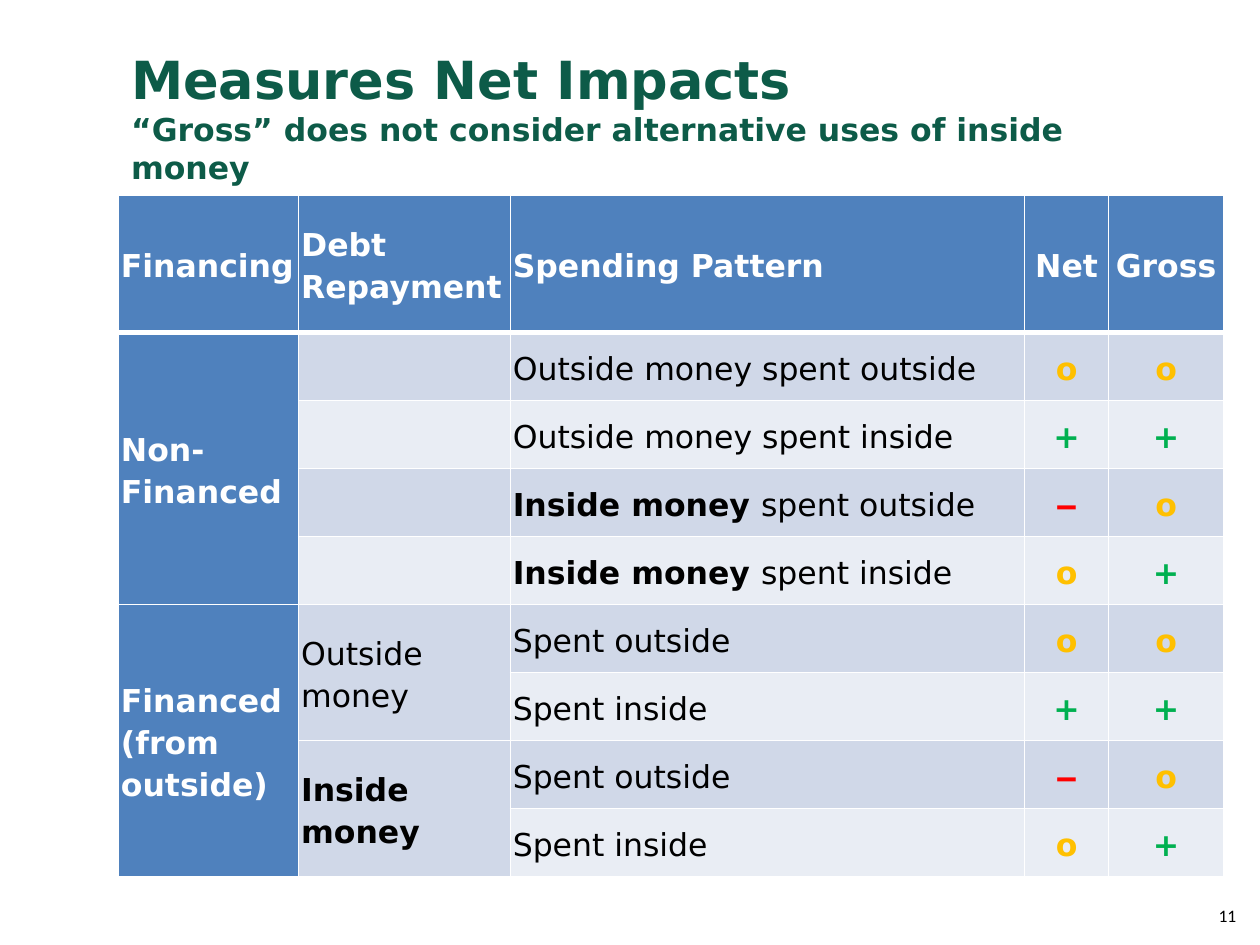
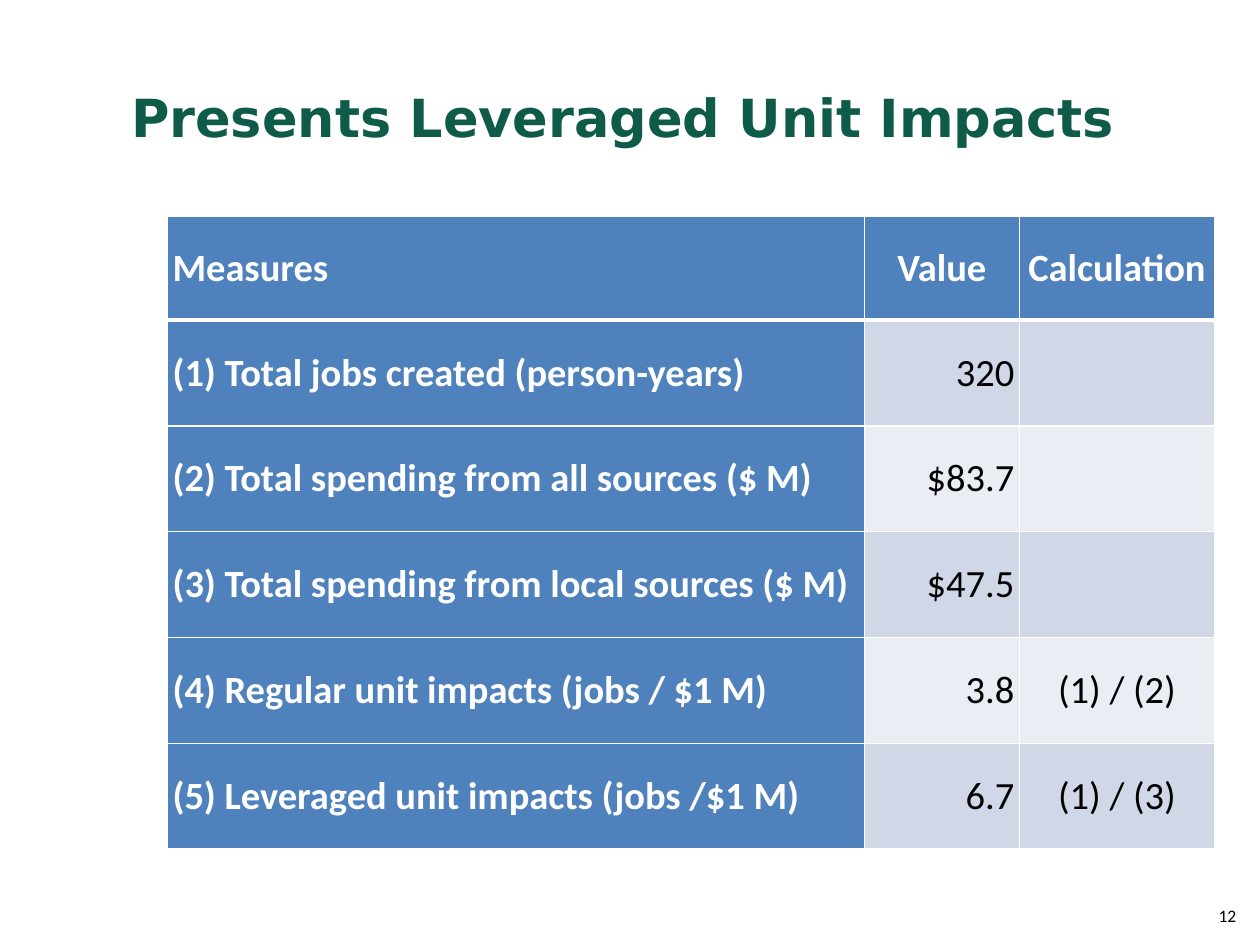
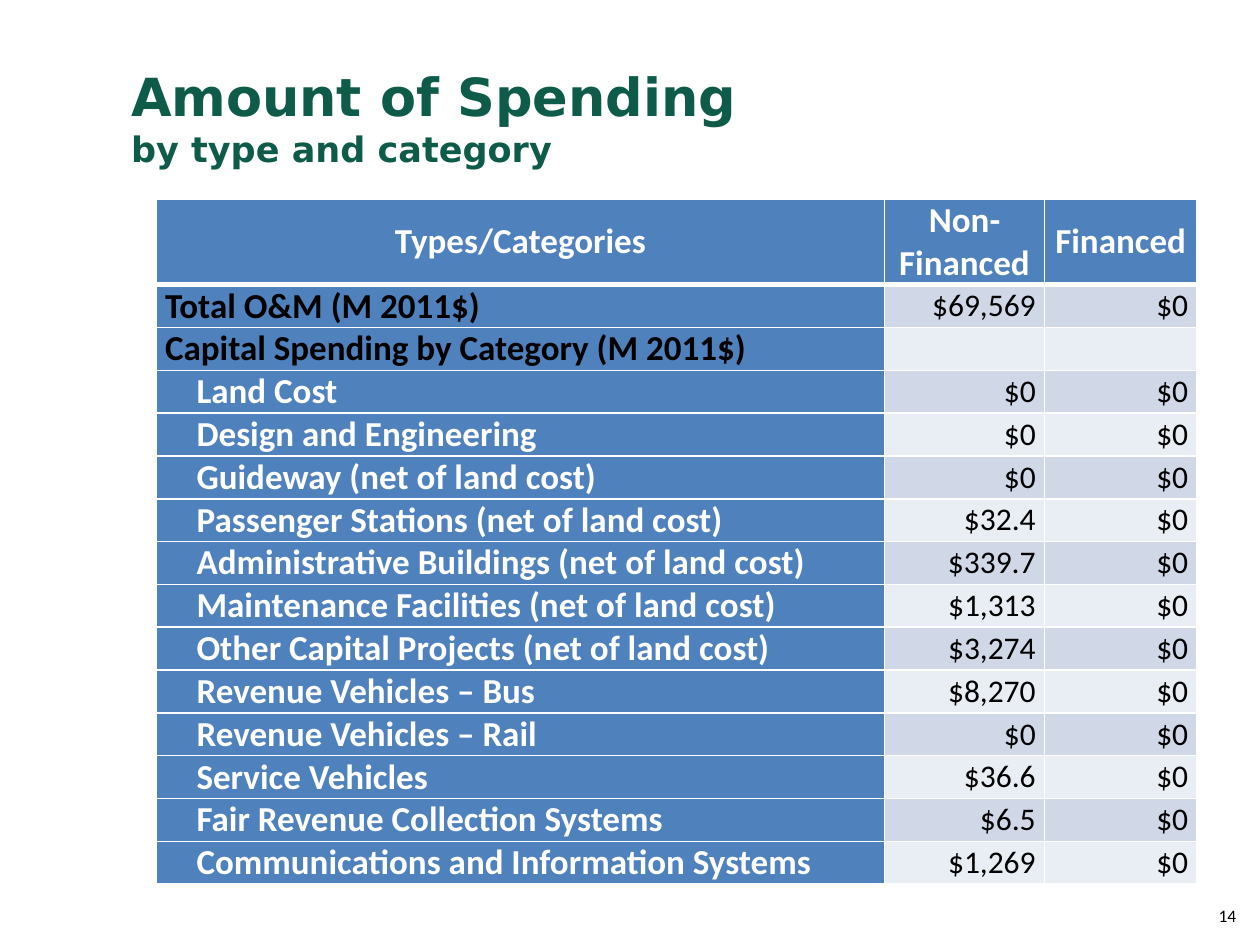
from lxml.etree import SubElement
from pptx import Presentation
from pptx.dml.color import RGBColor
from pptx.enum.text import MSO_ANCHOR, MSO_AUTO_SIZE, PP_ALIGN
from pptx.oxml.ns import qn
from pptx.util import Inches, Pt

GREEN, BLUE, WHITE, BLACK = "0D5B48", "4F81BD", "FFFFFF", "000000"
BANDS = ("E9EDF4", "D0D8E8")  # even and odd body rows
SIGN_COLORS = {"o": "FFC000", "+": "00B050", "‒": "FF0000"}
HEADING_FONT, BODY_FONT = "DejaVu Sans", "Calibri"
TITLE_AREA = (0.94, 0.3, 8.56, 1.25)
NUMBER_AREA = (9.03, 7.07, 0.88, 0.4)
TITLE_SIZE = 30
LEFT, CENTER, RIGHT = PP_ALIGN.LEFT, PP_ALIGN.CENTER, PP_ALIGN.RIGHT

# A tuple in a cell holds a bold part, then a regular part.
SLIDES = [
    {
        "number": 11,
        "title": "Measures Net Impacts",
        "subtitle": "“Gross” does not consider alternative uses of inside money",
        "subtitle_size": 18,
        "corner": (0.94, 1.55),
        "columns": (1.43, 1.68, 4.08, 0.67, 0.91),
        "header_height": 1.09,
        "row_height": 0.54,
        "font": HEADING_FONT,
        "label_size": 18,
        "value_size": 18,
        "inset": 0.02,
        "line_spacing": 1.15,
        "header_align": (LEFT, LEFT, LEFT, CENTER, CENTER),
        "body_align": (LEFT, LEFT, LEFT, CENTER, CENTER),
        "spans": [(1, 0, 4), (5, 0, 4), (5, 1, 2), (7, 1, 2)],  # row, column, rows
        "rows": [
            ("Financing", "Debt Repayment", "Spending Pattern", "Net", "Gross"),
            ("Non- Financed", "", "Outside money spent outside", "o", "o"),
            ("", "", "Outside money spent inside", "+", "+"),
            ("", "", ("Inside money ", "spent outside"), "‒", "o"),
            ("", "", ("Inside money ", "spent inside"), "o", "+"),
            ("Financed (from outside)", "Outside money", "Spent outside", "o", "o"),
            ("", "", "Spent inside", "+", "+"),
            ("", ("Inside money", ""), "Spent outside", "‒", "o"),
            ("", "", "Spent inside", "o", "+"),
        ],
    },
    {
        "number": 12,
        "title": "Presents Leveraged Unit Impacts",
        "corner": (1.33, 1.72),
        "columns": (5.53, 1.23, 1.55),
        "header_height": 0.82,
        "row_height": 0.84,
        "font": BODY_FONT,
        "label_size": 22,
        "value_size": 22,
        "inset": 0.04,
        "header_align": (LEFT, CENTER, CENTER),
        "body_align": (LEFT, RIGHT, CENTER),
        "rows": [
            ("Measures", "Value", "Calculation"),
            ("(1) Total jobs created (person-years)", "320", ""),
            ("(2) Total spending from all sources ($ M)", "$83.7", ""),
            ("(3) Total spending from local sources ($ M)", "$47.5", ""),
            ("(4) Regular unit impacts (jobs / $1 M)", "3.8", "(1) / (2)"),
            ("(5) Leveraged unit impacts (jobs /$1 M)", "6.7", "(1) / (3)"),
        ],
    },
    {
        "number": 14,
        "title": "Amount of Spending",
        "subtitle": "by type and category",
        "subtitle_size": 20,
        "corner": (1.24, 1.58),
        "columns": (5.78, 1.27, 1.21),
        "header_height": 0.68,
        "row_height": 0.34,
        "font": BODY_FONT,
        "label_size": 20,
        "value_size": 18,
        "inset": 0.07,
        "header_align": (CENTER, CENTER, CENTER),
        "body_align": (LEFT, RIGHT, RIGHT),
        "group_rows": (1, 2),  # black labels; the rows after them are indented
        "indent": 0.25,
        "rows": [
            ("Types/Categories", "Non- Financed", "Financed"),
            ("Total O&M (M 2011$)", "$69,569", "$0"),
            ("Capital Spending by Category (M 2011$)", "", ""),
            ("Land Cost", "$0", "$0"),
            ("Design and Engineering", "$0", "$0"),
            ("Guideway (net of land cost)", "$0", "$0"),
            ("Passenger Stations (net of land cost)", "$32.4", "$0"),
            ("Administrative Buildings (net of land cost)", "$339.7", "$0"),
            ("Maintenance Facilities (net of land cost)", "$1,313", "$0"),
            ("Other Capital Projects (net of land cost)", "$3,274", "$0"),
            ("Revenue Vehicles – Bus", "$8,270", "$0"),
            ("Revenue Vehicles – Rail", "$0", "$0"),
            ("Service Vehicles", "$36.6", "$0"),
            ("Fair Revenue Collection Systems", "$6.5", "$0"),
            ("Communications and Information Systems", "$1,269", "$0"),
        ],
    },
]


def rgb(code):
    return RGBColor.from_string(code)


def set_font(font, name, size, color, bold=False):
    font.name, font.size, font.bold = name, Pt(size), bold
    font.color.rgb = rgb(color)


def add_run(paragraph, text, *style):
    run = paragraph.add_run()
    run.text = text
    set_font(run.font, *style)


def fill_title(title, content):
    title.left, title.top, title.width, title.height = map(Inches, TITLE_AREA)
    frame = title.text_frame
    frame.auto_size = MSO_AUTO_SIZE.NONE
    frame.vertical_anchor = MSO_ANCHOR.MIDDLE
    heading = frame.paragraphs[0]
    heading.alignment = LEFT
    add_run(heading, content["title"], HEADING_FONT, TITLE_SIZE, GREEN, True)
    if "subtitle" in content:
        heading.add_line_break()
        SubElement(heading._p[-1], qn("a:rPr"), sz=str(TITLE_SIZE * 100))
        add_run(heading, content["subtitle"], HEADING_FONT,
                content["subtitle_size"], GREEN, True)


def add_page_number(slide, number):
    frame = slide.shapes.add_textbox(*map(Inches, NUMBER_AREA)).text_frame
    frame.word_wrap = True
    frame.vertical_anchor = MSO_ANCHOR.MIDDLE
    paragraph = frame.paragraphs[0]
    paragraph.text = str(number)
    paragraph.alignment = RIGHT
    set_font(paragraph.font, BODY_FONT, 10, BLACK)


def set_borders(cell, row):
    """White lines all round, thicker between the header and the body."""
    widths = {"L": 1, "R": 1, "T": 3 if row == 1 else 1, "B": 3 if row == 0 else 1}
    properties = cell._tc.get_or_add_tcPr()
    for position, (side, width) in enumerate(widths.items()):
        line = SubElement(properties, qn(f"a:ln{side}"), w=str(Pt(width)))
        solid = SubElement(line, qn("a:solidFill"))
        SubElement(solid, qn("a:srgbClr"), val=WHITE)
        properties.insert(position, line)


def fill_cell(cell, content, row, column):
    text = content["rows"][row][column]
    is_label = row == 0 or column == 0
    groups = content.get("group_rows", ())
    is_group = column == 0 and row in groups

    cell.fill.solid()
    cell.fill.fore_color.rgb = rgb(BLUE if is_label else BANDS[row % 2])
    set_borders(cell, row)
    cell.vertical_anchor = MSO_ANCHOR.MIDDLE
    cell.margin_top = cell.margin_bottom = 0
    cell.margin_left = cell.margin_right = Inches(content["inset"])
    if groups and column == 0 and row > max(groups):
        cell.margin_left = Inches(content["inset"] + content["indent"])

    paragraph = cell.text_frame.paragraphs[0]
    paragraph.alignment = content["header_align" if row == 0 else "body_align"][column]
    if "line_spacing" in content:
        paragraph.line_spacing = content["line_spacing"]
    size = content["label_size" if is_label else "value_size"]
    color = WHITE if is_label and not is_group else SIGN_COLORS.get(text, BLACK)
    strong, regular = text if isinstance(text, tuple) else ("", text)
    if is_label or text in SIGN_COLORS:
        strong, regular = regular, ""
    for part, bold in ((strong, True), (regular, False)):
        if part:
            add_run(paragraph, part, content["font"], size, color, bold)


def add_grid(slide, content):
    rows, columns = content["rows"], content["columns"]
    heights = [content["header_height"]] + [content["row_height"]] * (len(rows) - 1)
    area = (*content["corner"], sum(columns), sum(heights))
    table = slide.shapes.add_table(len(rows), len(columns), *map(Inches, area)).table
    table.horz_banding = False
    table.first_row = False
    for column, width in zip(table.columns, columns):
        column.width = Inches(width)
    for row, height in enumerate(heights):
        table.rows[row].height = Inches(height)
        for column in range(len(columns)):
            fill_cell(table.cell(row, column), content, row, column)
    for row, column, count in content.get("spans", ()):
        table.cell(row, column).merge(table.cell(row + count - 1, column))


def main():
    deck = Presentation()
    deck.slide_width, deck.slide_height = Inches(10), Inches(7.5)
    title_only = deck.slide_layouts[5]
    for content in SLIDES:
        slide = deck.slides.add_slide(title_only)
        add_page_number(slide, content["number"])
        fill_title(slide.shapes.title, content)
        add_grid(slide, content)
    deck.save("out.pptx")


if __name__ == "__main__":
    main()
